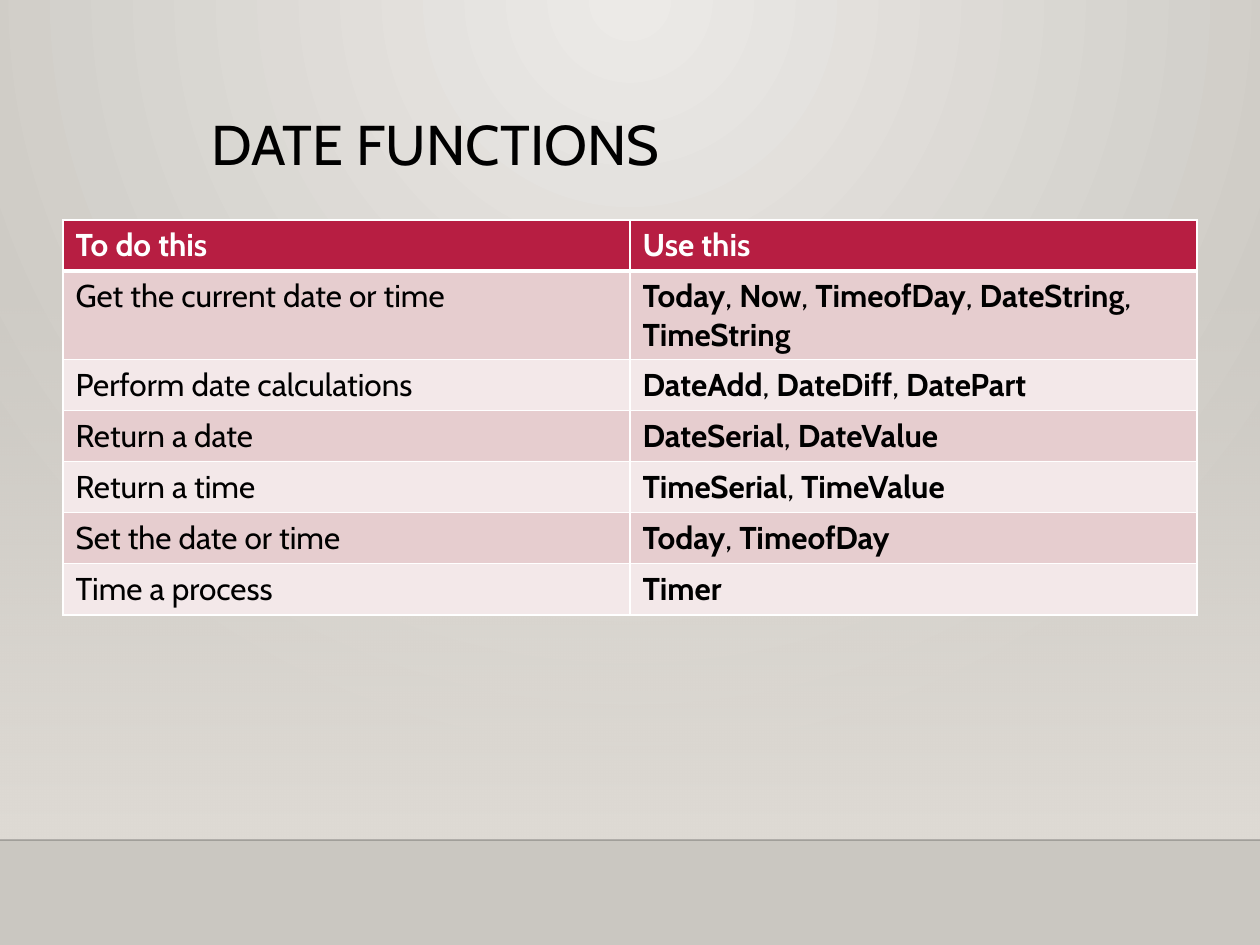
from lxml import etree
from pptx import Presentation
from pptx import util as u
from pptx.dml.color import RGBColor
from pptx.enum import shapes, text
from pptx.oxml.ns import qn

PX = 914400 / 126
BLACK = RGBColor(0, 0, 0)
WHITE = RGBColor(255, 255, 255)
RED = RGBColor(0xB7, 0x1E, 0x42)
ROSE = RGBColor(0xE6, 0xCD, 0xCF)
PALE = RGBColor(0xF3, 0xE8, 0xE9)
LIGHT = RGBColor(0xEC, 0xEA, 0xE7)
STONE = RGBColor(0xCA, 0xC7, 0xC1)
SAND = RGBColor(0xDF, 0xDB, 0xD5)
EDGE = RGBColor(0, 0, 1)


def px(*vals):
    return [u.Emu(round(v * PX)) for v in vals]


def add(parent, tag, **attrs):
    node = etree.SubElement(parent, qn(tag))
    for key, val in attrs.items():
        node.set(key, str(val))
    return node


def write(para, words, size=18, color=BLACK, bold=False, font="Cabin"):
    run = para.add_run()
    run.text = words
    run.font.name = font
    run.font.size = u.Pt(size)
    run.font.bold = bold
    run.font.color.rgb = color


def blend(solid, stops):
    """Swap a solid fill for a gradient of (place, colour, opacity) stops."""
    grad = etree.Element(qn("a:gradFill"), rotWithShape="1")
    row = add(grad, "a:gsLst")
    for place, color, alpha in stops:
        stop = add(row, "a:gs", pos=place * 1000)
        tone = add(stop, "a:srgbClr", val=color)
        if alpha < 100:
            add(tone, "a:alpha", val=alpha * 1000)
    solid.getparent().replace(solid, grad)
    return grad


class Page:
    def __init__(self, deck):
        self.slide = deck.slides.add_slide(deck.slide_layouts[6])
        self.items = self.slide.shapes

    def back(self, inner, outer):
        self.slide.background.fill.solid()
        solid = self.slide._element.find(".//" + qn("p:bgPr"))[0]
        grad = blend(solid, [(0, inner, 100), (100, outer, 100)])
        way = add(grad, "a:path", path="circle")
        add(way, "a:fillToRect", l=43000, t=0, r=43000, b=100000)

    def fade(self, box, color):
        shape = self.items.add_shape(shapes.MSO_SHAPE.RECTANGLE, *px(*box))
        shape.shadow.inherit = False
        shape.line.fill.background()
        shape.fill.solid()
        solid = shape._element.spPr.find(qn("a:solidFill"))
        grad = blend(solid, [(0, color, 0), (100, color, 100)])
        add(grad, "a:lin", ang=5400000, scaled=0)

    def rule(self, ends, color, alpha):
        line = self.items.add_connector(shapes.MSO_CONNECTOR.STRAIGHT, *px(*ends))
        line.line.color.rgb = color
        line.line.width = u.Pt(1)
        props = line._element.spPr
        add(props.find(".//" + qn("a:srgbClr")), "a:alpha", val=alpha * 1000)
        add(props, "a:effectLst")

    def title(self, box, words):
        frame = self.items.add_textbox(*px(*box)).text_frame
        frame.word_wrap = True
        frame.vertical_anchor = text.MSO_ANCHOR.TOP
        para = frame.paragraphs[0]
        para.line_spacing = 0.9
        write(para, words, size=32)

    def edges(self, cell, **widths):
        props = cell._tc.get_or_add_tcPr()
        for side in "LRTB":
            line = add(props, "a:ln" + side, w=u.Pt(widths.get(side, 1)))
            add(add(line, "a:solidFill"), "a:srgbClr", val=WHITE)

    def table(self, box, head, rows):
        grid = self.items.add_table(len(rows) + 1, len(head), *px(*box)).table
        for col, words in enumerate(head):
            cell = grid.cell(0, col)
            self.edges(cell, B=3)
            cell.fill.solid()
            cell.fill.fore_color.rgb = RED
            write(cell.text_frame.paragraphs[0], words, color=WHITE, bold=True)
        for num, (task, names) in enumerate(rows, 1):
            for col in range(2):
                cell = grid.cell(num, col)
                self.edges(cell, T=3 if num == 1 else 1)
                cell.fill.solid()
                cell.fill.fore_color.rgb = ROSE if num % 2 else PALE
            write(grid.cell(num, 0).text_frame.paragraphs[0], task)
            para = grid.cell(num, 1).text_frame.paragraphs[0]
            for spot, name in enumerate(names.split()):
                if spot:
                    write(para, ", ")
                write(para, name, bold=True)


def main():
    deck = Presentation()
    deck.slide_width, deck.slide_height = px(1260, 945)
    page = Page(deck)

    # Backdrop and floor line
    page.back(LIGHT, STONE)
    page.fade((0, 277, 1260, 563), SAND)
    page.rule((0, 840, 1260, 840), EDGE, 20)

    # Title
    page.title((199, 111, 906, 145), "DATE FUNCTIONS")

    # Table of functions
    rows = [
        ("Get the current date or time", "Today Now TimeofDay DateString TimeString"),
        ("Perform date calculations", "DateAdd DateDiff DatePart"),
        ("Return a date", "DateSerial DateValue"),
        ("Return a time", "TimeSerial TimeValue"),
        ("Set the date or time", "Today TimeofDay"),
        ("Time a process", "Timer"),
    ]
    page.table((63, 220, 1134, 358), ("To do this", "Use this"), rows)

    deck.save("out.pptx")


if __name__ == "__main__":
    main()
